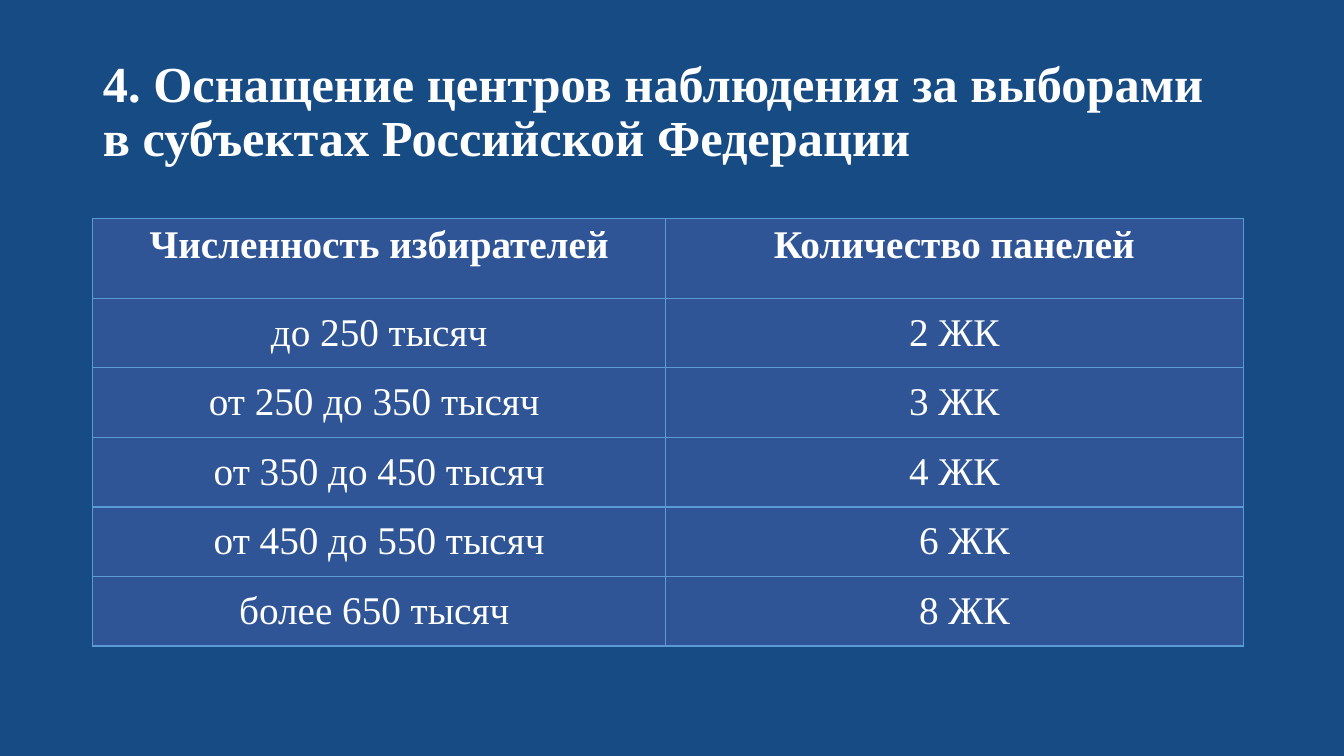
from lxml import etree
from pptx import Presentation
from pptx.dml.color import RGBColor
from pptx.enum.text import MSO_ANCHOR, MSO_AUTO_SIZE, PP_ALIGN
from pptx.oxml.ns import qn
from pptx.util import Inches, Pt

LEFT, CENTER = PP_ALIGN.LEFT, PP_ALIGN.CENTER
TOP, MIDDLE = MSO_ANCHOR.TOP, MSO_ANCHOR.MIDDLE
NO_AUTOFIT = MSO_AUTO_SIZE.NONE

NAVY = RGBColor(0x17, 0x4B, 0x84)
CELL_BLUE = RGBColor(0x2F, 0x55, 0x97)
BORDER_BLUE = RGBColor(0x5B, 0x9B, 0xD5)
WHITE = RGBColor(0xFF, 0xFF, 0xFF)

TITLE = "4. Оснащение центров наблюдения за выборами\vв субъектах Российской Федерации"
PANEL_ROWS = [
    ("Численность избирателей", "Количество панелей"),
    ("до 250 тысяч", "2 ЖК"),
    ("от 250 до 350 тысяч ", "3 ЖК"),
    ("от 350 до 450 тысяч", "4 ЖК"),
    ("от 450 до 550 тысяч", "6 ЖК"),
    ("более 650 тысяч ", "8 ЖК"),
]
INDENTED_PANELS = ("6 ЖК", "8 ЖК")
COLUMN_WIDTHS = (5.68, 5.73)
HEADER_HEIGHT, ROW_HEIGHT = 0.79, 0.69


class SlideBuilder:
    """Holds the text style and the current slide and adds elements to it."""

    def __init__(self, presentation, font_name, font_color):
        self.font_name = font_name
        self.font_color = font_color
        self.slide = presentation.slides.add_slide(presentation.slide_layouts[5])

    def background(self, color):
        fill = self.slide.background.fill
        fill.solid()
        fill.fore_color.rgb = color

    def format_text(self, text_frame, size, bold, alignment):
        for paragraph in text_frame.paragraphs:
            paragraph.alignment = alignment
            for run in paragraph.runs:
                run.font.name = self.font_name
                run.font.size = Pt(size)
                run.font.bold = bold
                run.font.color.rgb = self.font_color

    def title(self, text, left, top, width, height):
        shape = self.slide.shapes.title
        shape.left, shape.top = Inches(left), Inches(top)
        shape.width, shape.height = Inches(width), Inches(height)
        text_frame = shape.text_frame
        text_frame.text = text
        text_frame.auto_size = NO_AUTOFIT
        text_frame.vertical_anchor = MIDDLE
        text_frame.paragraphs[0].line_spacing = 0.9
        self.format_text(text_frame, 36, True, LEFT)

    def cell_borders(self, cell, color):
        properties = cell._tc.get_or_add_tcPr()
        for side in ("a:lnL", "a:lnR", "a:lnT", "a:lnB"):
            line = etree.SubElement(properties, qn(side), w=str(Pt(1)))
            fill = etree.SubElement(line, qn("a:solidFill"))
            etree.SubElement(fill, qn("a:srgbClr"), val=str(color))

    def table(self, rows, left, top, widths, heights):
        frame = self.slide.shapes.add_table(
            len(rows), len(widths), Inches(left), Inches(top),
            Inches(sum(widths)), Inches(sum(heights)))
        table = frame.table
        for column, width in zip(table.columns, widths):
            column.width = Inches(width)
        for row_index, (row, texts) in enumerate(zip(table.rows, rows)):
            row.height = Inches(heights[row_index])
            is_header = row_index == 0
            for cell, text in zip(row.cells, texts):
                self.cell_borders(cell, BORDER_BLUE)
                cell.fill.solid()
                cell.fill.fore_color.rgb = CELL_BLUE
                cell.vertical_anchor = TOP if is_header else MIDDLE
                if text in INDENTED_PANELS:
                    cell.margin_left = Inches(0.3)
                cell.text_frame.text = text
                self.format_text(cell.text_frame, 28, is_header, CENTER)


def main():
    presentation = Presentation()
    presentation.slide_width = Inches(13.33)
    presentation.slide_height = Inches(7.5)
    builder = SlideBuilder(presentation, "Times New Roman", WHITE)
    builder.background(NAVY)
    builder.title(TITLE, 0.92, 0.4, 12.21, 1.45)
    heights = [HEADER_HEIGHT] + [ROW_HEIGHT] * (len(PANEL_ROWS) - 1)
    builder.table(PANEL_ROWS, 0.92, 2.17, COLUMN_WIDTHS, heights)
    presentation.save("out.pptx")


if __name__ == "__main__":
    main()
